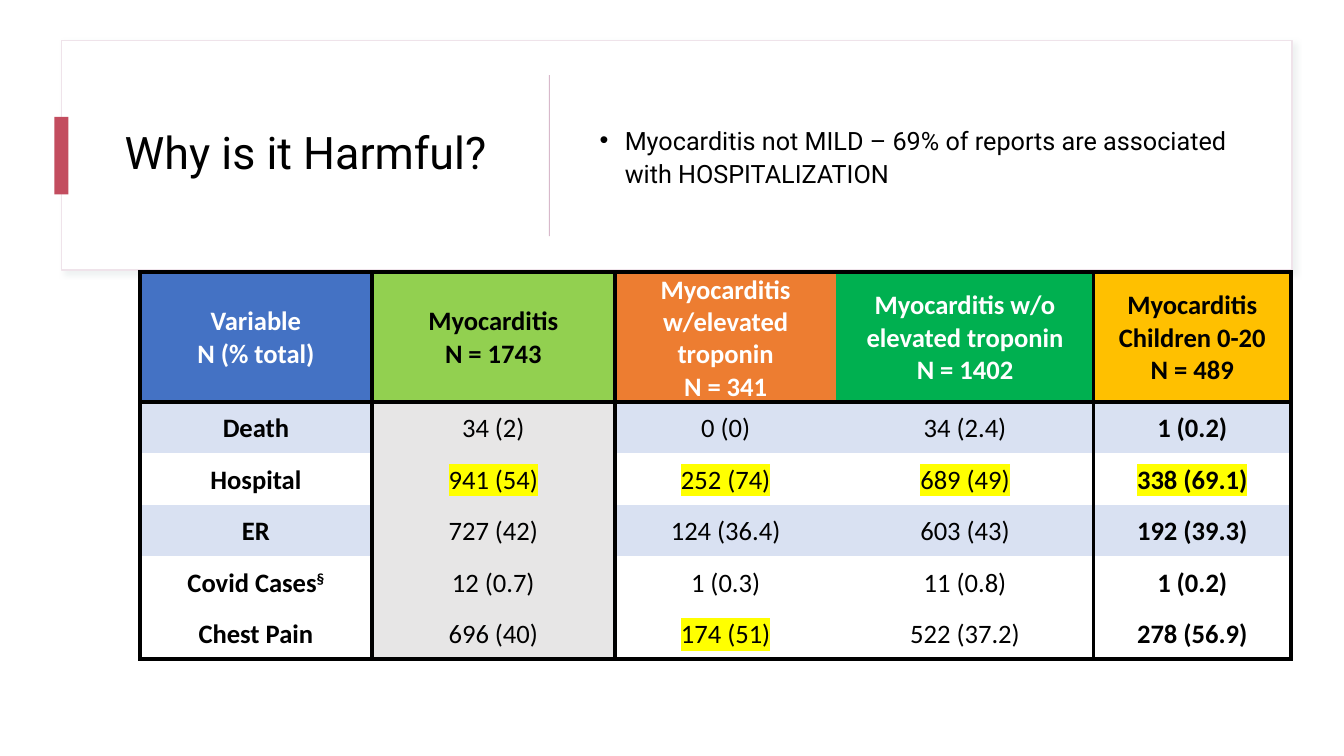
from pptx import Presentation
from pptx.dml.color import RGBColor
from pptx.enum.shapes import MSO_SHAPE
from pptx.enum.text import MSO_ANCHOR, PP_ALIGN
from pptx.oxml import parse_xml
from pptx.oxml.ns import nsdecls, qn
from pptx.util import Pt

NS = nsdecls("a")
BLACK, WHITE, BAND, GREY = "000000", "FFFFFF", "D9E1F2", "E7E6E6"


def rgb(code):
    return RGBColor.from_string(code)


class Deck:
    head = "Roboto"
    body = "Calibri"
    mark = "FFFF00"

    def __init__(self):
        self.prs = Presentation()
        self.prs.slide_width, self.prs.slide_height = Pt(960), Pt(540)
        self.slide = self.prs.slides.add_slide(self.prs.slide_layouts[6])

    def font(self, run, size, color, name, bold=False):
        run.font.size, run.font.bold, run.font.name = Pt(size), bold, name
        run.font.color.rgb = rgb(color)

    def rect(self, box, fill, line=None, shade=None):
        form = self.slide.shapes.add_shape(MSO_SHAPE.RECTANGLE, *map(Pt, box))
        form.shadow.inherit = False
        form.fill.solid()
        form.fill.fore_color.rgb = rgb(fill)
        if line:
            form.line.color.rgb = rgb(line)
            form.line.width = Pt(1)
        else:
            form.line.fill.background()
        if shade:
            form._element.spPr.find(qn("a:effectLst")).append(parse_xml(
                f'<a:outerShdw {NS} blurRad="{Pt(4)}" dist="{Pt(3)}" dir="2700000">'
                f'<a:srgbClr val="{shade}"><a:alpha val="30000"/></a:srgbClr>'
                '</a:outerShdw>'))

    def text(self, box, words, size, space):
        frame = self.slide.shapes.add_textbox(*map(Pt, box)).text_frame
        frame.word_wrap = True
        frame.vertical_anchor = MSO_ANCHOR.MIDDLE
        frame.text = words
        para = frame.paragraphs[0]
        para.line_spacing = space
        self.font(para.runs[0], size, BLACK, self.head)
        return para

    def bullet(self, box, words, size, space):
        para = self.text(box, words, size, space)
        para.space_before = Pt(10)
        props = para._p.get_or_add_pPr()
        props.set("marL", str(Pt(18)))
        props.set("indent", str(-Pt(18)))
        props.append(parse_xml(f'<a:buFont {NS} typeface="Arial"/>'))
        props.append(parse_xml(f'<a:buChar {NS} char="•"/>'))

    def edge(self, cell, sides):
        props = cell._tc.get_or_add_tcPr()
        for side in "LRTB":
            if side in sides:
                xml = (f'<a:ln{side} {NS} w="{Pt(3)}"><a:solidFill>'
                       f'<a:srgbClr val="{BLACK}"/></a:solidFill></a:ln{side}>')
            else:
                xml = f'<a:ln{side} {NS} w="0"><a:noFill/></a:ln{side}>'
            props.append(parse_xml(xml))

    def cell(self, cell, words, color, bold, fill, sides, lit):
        cell.margin_left = cell.margin_right = Pt(10)
        cell.margin_top, cell.margin_bottom = Pt(1.4), 0
        cell.vertical_anchor = MSO_ANCHOR.MIDDLE
        self.edge(cell, sides)
        if fill:
            cell.fill.solid()
            cell.fill.fore_color.rgb = rgb(fill)
        else:
            cell.fill.background()
        base, sign, _ = words.partition("§")
        cell.text_frame.text = base
        if sign:
            run = cell.text_frame.paragraphs[0].add_run()
            run.text = sign
            run.font._element.set("baseline", "30000")
        for para in cell.text_frame.paragraphs:
            para.alignment = PP_ALIGN.CENTER
            for run in para.runs:
                self.font(run, 19, color, self.body, bold)
                if lit:
                    run.font._element.find(qn("a:solidFill")).addnext(parse_xml(
                        f'<a:highlight {NS}><a:srgbClr val="{self.mark}"/></a:highlight>'))

    def table(self, left, top, wide, high, heads, rows, lit):
        shape = self.slide.shapes.add_table(
            len(high), len(wide), Pt(left), Pt(top), Pt(sum(wide)), Pt(sum(high)))
        grid = shape.table
        grid.first_row = grid.horz_banding = False
        for col, size in zip(grid.columns, wide):
            col.width = Pt(size)
        for row, size in zip(grid.rows, high):
            row.height = Pt(size)
        last = len(rows)
        for c in range(len(wide)):
            # The two troponin columns share one outline
            flank = {2: "L", 3: "R"}.get(c, "LR")
            words, fill, color = heads[c]
            self.cell(grid.cell(0, c), words, color, True, fill, flank + "TB", False)
            for r, row in enumerate(rows, 1):
                sides = flank + ("T" if r == 1 else "") + ("B" if r == last else "")
                fill = GREY if c == 1 else BAND if r in (1, 3) else None
                self.cell(grid.cell(r, c), row[c], BLACK, c in (0, 4), fill,
                          sides, (r, c) in lit)


deck = Deck()

# Heading panel
deck.rect((44, 28.8, 879, 164.2), WHITE, "EFE3EA", "C8D3D3")
deck.text((82, 46, 278.6, 129.6), "Why is it Harmful?", 32, 0.9)
deck.rect((38.9, 83.5, 10, 55.4), "C34D5F")
deck.rect((392.1, 53.6, 0.72, 115.2), "D8B9CB")
deck.bullet((421.2, 46, 472.3, 129.6),
            "Myocarditis not MILD – 69% of reports are associated with HOSPITALIZATION",
            18, 1.1)

# Outcome table
heads = [
    ("Variable\nN (% total)", "4472C4", WHITE),
    ("Myocarditis\nN = 1743", "92D050", BLACK),
    ("Myocarditis w/elevated troponin\nN = 341", "ED7D31", WHITE),
    ("Myocarditis w/o elevated troponin\nN = 1402", "00B050", WHITE),
    ("Myocarditis Children 0-20\nN = 489", "FFC000", BLACK),
]
rows = [
    ("Death", "34 (2)", "0 (0)", "34 (2.4)", "1 (0.2)"),
    ("Hospital", "941 (54)", "252 (74)", "689 (49)", "338 (69.1)"),
    ("ER", "727 (42)", "124 (36.4)", "603 (43)", "192 (39.3)"),
    ("Covid Cases§", "12 (0.7)", "1 (0.3)", "11 (0.8)", "1 (0.2)"),
    ("Chest Pain", "696 (40)", "174 (51)", "522 (37.2)", "278 (56.9)"),
]
lit = {(2, 1), (2, 2), (2, 3), (2, 4), (5, 2)}
deck.table(100, 194.4, [165.6, 173.5, 158.4, 183.6, 141.1],
           [87.8] + [36.8] * len(rows), heads, rows, lit)

deck.prs.save("out.pptx")
